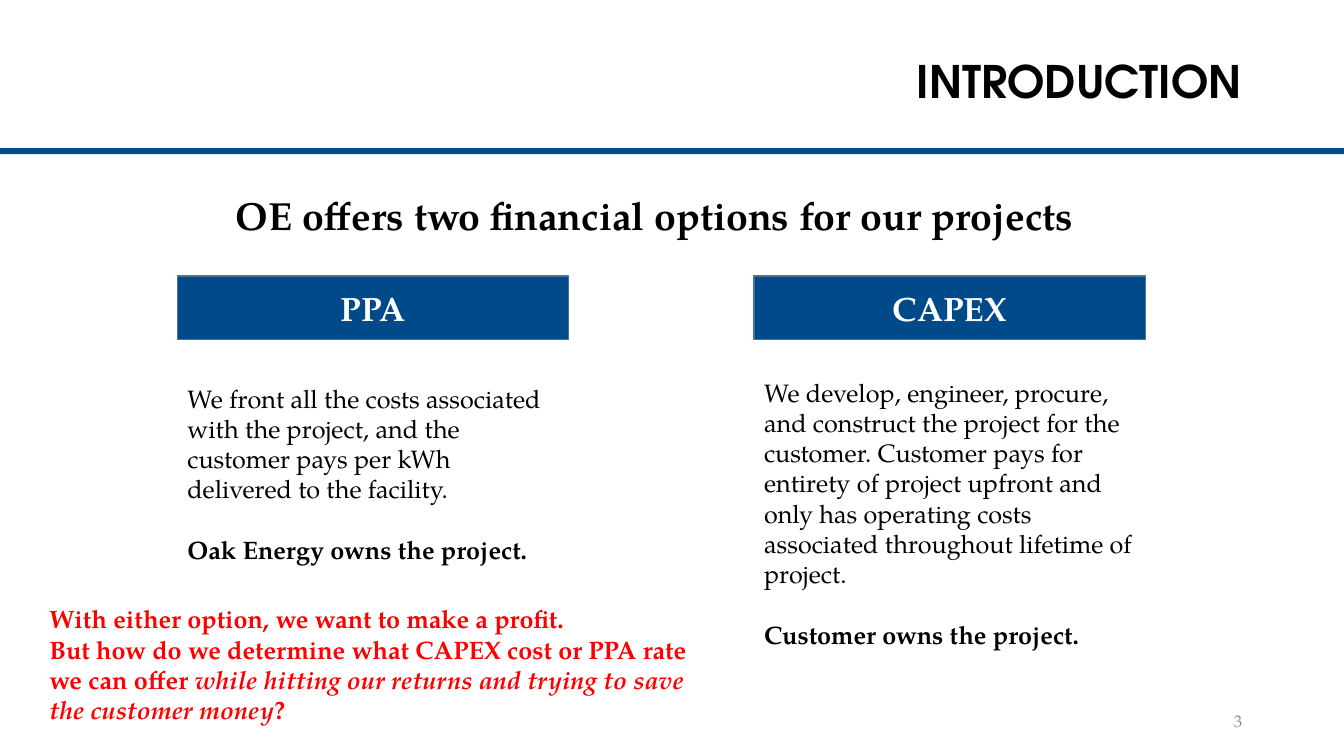
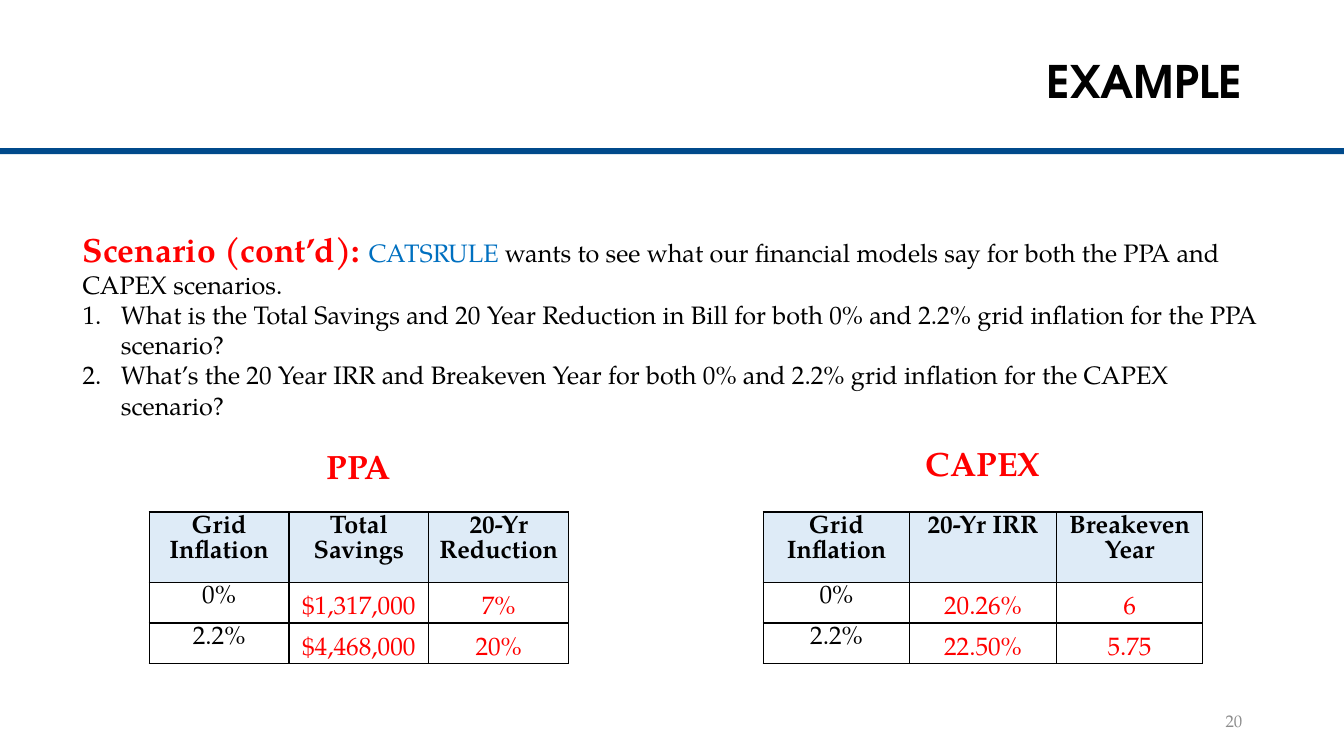
from lxml import etree
from pptx import Presentation
from pptx.dml.color import RGBColor
from pptx.enum.shapes import MSO_SHAPE
from pptx.enum.text import MSO_ANCHOR, PP_ALIGN
from pptx.oxml.ns import qn
from pptx.util import Inches, Pt

RECTANGLE = MSO_SHAPE.RECTANGLE
LEFT, CENTER, RIGHT = PP_ALIGN.LEFT, PP_ALIGN.CENTER, PP_ALIGN.RIGHT
TOP, MIDDLE = MSO_ANCHOR.TOP, MSO_ANCHOR.MIDDLE

COLORS = {
    "band": "004A8B",
    "header": "004A8A",
    "header_line": "43739E",
    "table_head": "DEEBF7",
    "text": "000000",
    "light": "FFFFFF",
    "accent": "FF0000",
    "client": "0070C0",
    "number": "8C8C8C",
}
TITLE_FONT = "TeX Gyre Adventor"
BODY_FONT = "TeX Gyre Pagella"
TABLE_TOP = 5.08
ROW_HEIGHTS = (0.7, 0.4, 0.4)


def rgb(name):
    """Return the named colour."""
    return RGBColor.from_string(COLORS[name])


def style(font, size=None, color=None, bold=None, italic=None, name=None):
    """Set the given properties of a font."""
    if name:
        font.name = name
    if size:
        font.size = Pt(size)
    if color:
        font.color.rgb = rgb(color)
    if bold is not None:
        font.bold = bold
    if italic is not None:
        font.italic = italic


def write(para, spans, size=18, color="text", bold=False, name=BODY_FONT,
          align=LEFT, spacing=None, before=None, numbered=False):
    """Fill a paragraph with text, or with (text, run style) pairs."""
    para.alignment = align
    if spacing:
        para.line_spacing = spacing
    if before:
        para.space_before = Pt(before)
    if numbered:
        properties = para._p.get_or_add_pPr()
        properties.set("marL", str(Inches(0.38)))
        properties.set("indent", str(-Inches(0.38)))
        etree.SubElement(properties, qn("a:buFont"), typeface="+mj-lt")
        etree.SubElement(properties, qn("a:buAutoNum"), type="arabicPeriod")
    style(para.font, size, color, bold, name=name)
    for text, look in [(spans, {})] if isinstance(spans, str) else spans:
        span = para.add_run()
        span.text = text
        style(span.font, **look)


def add_text(page, left, top, width, height, paragraphs, anchor=TOP, **look):
    """Place a text box whose paragraphs are (content, own style) pairs."""
    box = page.shapes.add_textbox(Inches(left), Inches(top), Inches(width), Inches(height))
    frame = box.text_frame
    frame.word_wrap = True
    frame.vertical_anchor = anchor
    for index, (content, own) in enumerate(paragraphs):
        para = frame.add_paragraph() if index else frame.paragraphs[0]
        write(para, content, **{**look, **own})


def add_block(page, left, top, width, height, fill):
    """Place a plain rectangle without outline."""
    block = page.shapes.add_shape(RECTANGLE, Inches(left), Inches(top), Inches(width), Inches(height))
    block.shadow.inherit = False
    block.fill.solid()
    block.fill.fore_color.rgb = rgb(fill)
    block.line.fill.background()
    return block


def add_page(deck, title, number):
    """Add a page with its band, page number and title."""
    page = deck.slides.add_slide(deck.slide_layouts[6])
    add_block(page, 0, 1.47, 13.33, 0.06, "band")
    add_text(page, 9.42, 6.95, 3, 0.4, [(str(number), {})], MIDDLE,
             size=12, color="number", align=RIGHT)
    add_text(page, 1.89, 0.4, 10.53, 0.86, [(title, {})], MIDDLE, size=32,
             bold=True, name=TITLE_FONT, align=RIGHT, spacing=0.9)
    return page


def add_option(page, left, body_top, body_width, name, description, owner):
    """Place a financial option: header bar, description and owner."""
    header = add_block(page, left, 2.74, 3.88, 0.63, "header")
    header.line.color.rgb = rgb("header_line")
    header.line.width = Pt(1)
    header.text_frame.vertical_anchor = MIDDLE
    write(header.text_frame.paragraphs[0], name, 24, "light", True, align=CENTER)
    add_text(page, left, body_top, body_width, 2.5,
             [(description, {}), (owner, {"bold": True, "before": 21.6})])


def add_borders(cell):
    """Draw thin lines on all sides of a cell."""
    properties = cell._tc.get_or_add_tcPr()
    for side in ("lnL", "lnR", "lnT", "lnB"):
        line = etree.SubElement(properties, qn(f"a:{side}"), w=str(Pt(1)))
        fill = etree.SubElement(line, qn("a:solidFill"))
        etree.SubElement(fill, qn("a:srgbClr"), val=COLORS["text"])


def fill_cell(cell, text, is_head):
    """Write and format one cell of a result table."""
    add_borders(cell)
    cell.margin_left = cell.margin_right = Inches(0.07)
    cell.margin_top = Inches(0.03)
    cell.margin_bottom = 0
    if is_head:
        cell.fill.solid()
        cell.fill.fore_color.rgb = rgb("table_head")
    else:
        cell.fill.background()
    write(cell.text_frame.paragraphs[0], text, bold=is_head, align=CENTER, spacing=Pt(18))


def add_results(page, left, width, caption_top, caption, heads, answers):
    """Place a caption, a table with open cells and the answers laid over them."""
    add_text(page, left, caption_top, width, 0.5, [(caption, {})],
             size=24, color="accent", bold=True, align=CENTER)
    rows = [heads, ("0%", "", ""), ("2.2%", "", "")]
    frame = page.shapes.add_table(len(rows), len(heads), Inches(left), Inches(TABLE_TOP),
                                  Inches(width), Inches(sum(ROW_HEIGHTS)))
    table = frame.table
    table.first_row = table.horz_banding = False
    for row_index, row in enumerate(rows):
        table.rows[row_index].height = Inches(ROW_HEIGHTS[row_index])
        for column_index, text in enumerate(row):
            fill_cell(table.cell(row_index, column_index), text, row_index == 0)
    column_width = width / len(heads)
    for row_index, row in enumerate(answers, 1):
        top = TABLE_TOP + sum(ROW_HEIGHTS[:row_index]) + 0.02
        for column_index, answer in enumerate(row, 1):
            add_text(page, left + column_index * column_width, top, column_width, 0.4,
                     [(answer, {})], color="accent", align=CENTER)


def build_introduction(deck):
    """Build the page with the two financial options."""
    page = add_page(deck, "INTRODUCTION", 3)
    add_text(page, 2.24, 1.9, 10, 0.6,
             [("OE offers two financial options for our projects", {})],
             size=28, bold=True, spacing=0.9)
    add_option(page, 1.76, 3.75, 3.88, "PPA",
               "We front all the costs associated with the project, and the "
               "customer pays per kWh delivered to the facility.",
               "Oak Energy owns the project.")
    add_option(page, 7.48, 3.69, 3.97, "CAPEX",
               "We develop, engineer, procure, and construct the project for the "
               "customer. Customer pays for entirety of project upfront and only has "
               "operating costs associated throughout lifetime of project.",
               "Customer owns the project.")
    question = [
        ("But how do we determine what CAPEX cost or PPA rate we can offer ", {}),
        ("while hitting our returns and trying to save the customer money", {"italic": True}),
        ("?", {}),
    ]
    add_text(page, 0.39, 5.94, 6.61, 1.31,
             [("With either option, we want to make a profit.", {}), (question, {})],
             color="accent", bold=True)


def build_example(deck):
    """Build the page with the scenario and its result tables."""
    page = add_page(deck, "EXAMPLE", 20)
    scenario = [
        ("Scenario (cont’d): ", {"size": 24, "color": "accent", "bold": True}),
        ("CATSRULE", {"color": "client"}),
        (" wants to see what our financial models say for both the PPA and CAPEX scenarios.", {}),
    ]
    questions = [
        "What is the Total Savings and 20 Year Reduction in Bill for both 0% and 2.2% "
        "grid inflation for the PPA scenario?",
        "What’s the 20 Year IRR and Breakeven Year for both 0% and 2.2% grid inflation "
        "for the CAPEX scenario?",
    ]
    add_text(page, 0.72, 2.22, 11.89, 2.02,
             [(scenario, {})] + [(question, {"numbered": True}) for question in questions])
    add_results(page, 1.48, 4.16, 4.37, "PPA",
                ("Grid Inflation", "Total Savings", "20-Yr Reduction"),
                [("$1,317,000", "7%"), ("$4,468,000", "20%")])
    add_results(page, 7.57, 4.36, 4.34, "CAPEX",
                ("Grid Inflation", "20-Yr IRR", "Breakeven Year"),
                [("20.26%", "6"), ("22.50%", "5.75")])


def main():
    """Build and save the deck."""
    deck = Presentation()
    deck.slide_width = Inches(13.33)
    deck.slide_height = Inches(7.5)
    build_introduction(deck)
    build_example(deck)
    deck.save("out.pptx")


if __name__ == "__main__":
    main()
